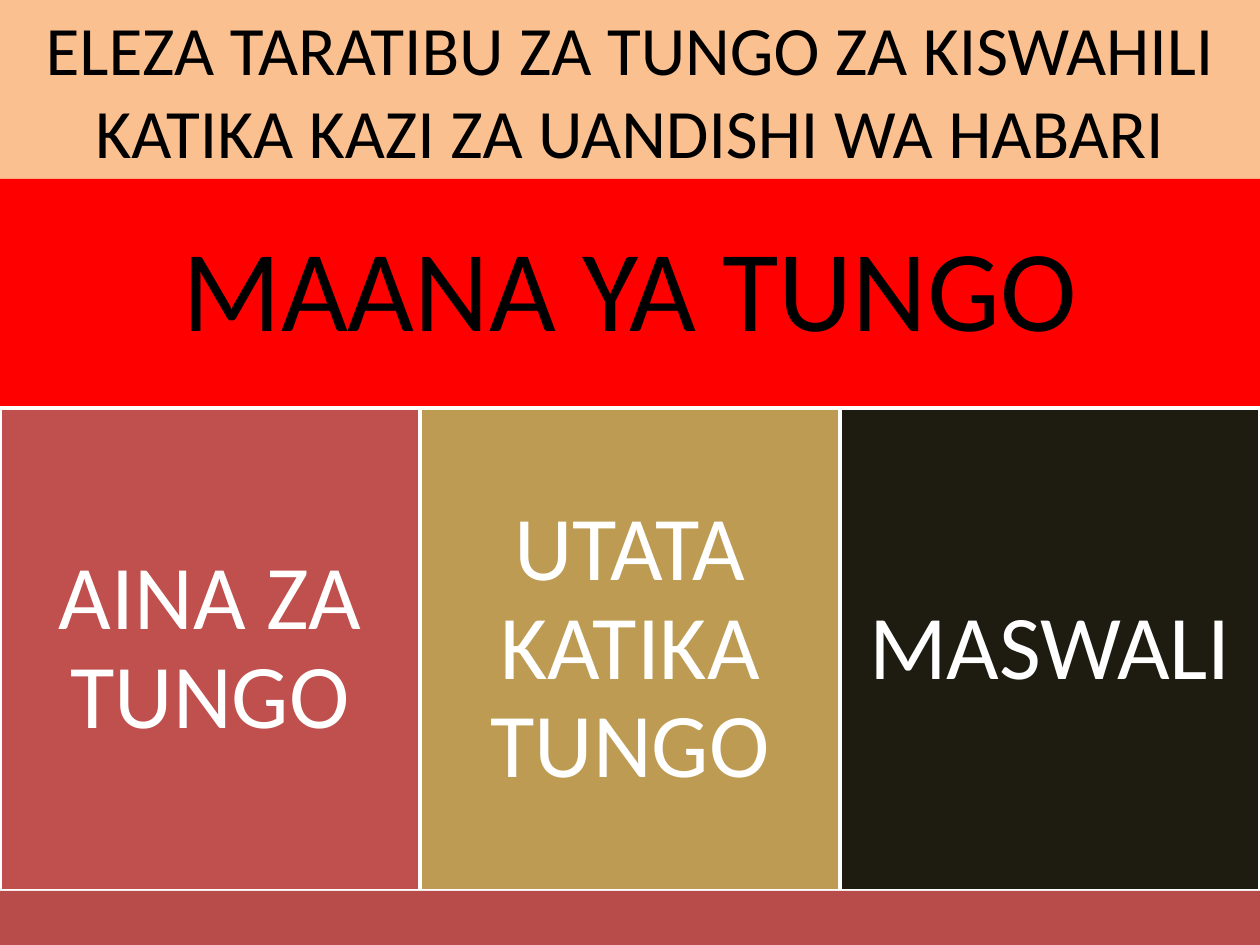
from pptx import Presentation
from pptx.dml.color import RGBColor
from pptx.enum.shapes import MSO_SHAPE
from pptx.enum.text import MSO_ANCHOR, PP_ALIGN
from pptx.util import Inches, Pt

RECTANGLE = MSO_SHAPE.RECTANGLE
MIDDLE = MSO_ANCHOR.MIDDLE
CENTER = PP_ALIGN.CENTER
WIDTH, HEIGHT = 10, 7.5


def color(value):
    return RGBColor.from_string(value)


def add_block(text, left, top, width, height, fill, line=None, size=52,
              font_color="FFFFFF", inset=0.22, spacing=0.9):
    shape = slide.shapes.add_shape(
        RECTANGLE, Inches(left), Inches(top), Inches(width), Inches(height))
    shape.shadow.inherit = False
    shape.fill.solid()
    shape.fill.fore_color.rgb = color(fill)
    if line:
        shape.line.color.rgb = color(line)
        shape.line.width = Pt(2)
    else:
        shape.line.fill.background()
    if not text:
        return
    frame = shape.text_frame
    frame.word_wrap = True
    frame.vertical_anchor = MIDDLE
    frame.margin_left = frame.margin_right = Inches(inset)
    frame.margin_top = frame.margin_bottom = Inches(min(inset, 0.28))
    paragraph = frame.paragraphs[0]
    paragraph.alignment = CENTER
    paragraph.line_spacing = spacing
    run = paragraph.add_run()
    run.text = text
    run.font.name = "Calibri"
    run.font.size = Pt(size)
    run.font.color.rgb = color(font_color)


presentation = Presentation()
presentation.slide_width = Inches(WIDTH)
presentation.slide_height = Inches(HEIGHT)
slide = presentation.slides.add_slide(presentation.slide_layouts[6])

# Row edges: title, banner, topics, footer
title_top, banner_top, topics_top, footer_top = 0, 1.42, 3.24, 7.07

# Title and banner
add_block("ELEZA TARATIBU ZA TUNGO ZA KISWAHILI KATIKA KAZI ZA UANDISHI WA HABARI",
          0, title_top, WIDTH, banner_top - title_top, "FAC090",
          size=39.6, font_color="000000", inset=0.1, spacing=1.0)
add_block("MAANA YA TUNGO", 0, banner_top, WIDTH, topics_top - banner_top,
          "FF0000", size=66, font_color="000000", inset=0.28)

# Three equal topic columns
topics = [("AINA ZA TUNGO", "C0504D"),
          ("UTATA KATIKA TUNGO", "BD9B53"),
          ("MASWALI", "1E1C11")]
column = WIDTH / len(topics)
for index, (topic, fill) in enumerate(topics):
    add_block(topic, index * column, topics_top, column,
              footer_top - topics_top, fill, line="FFFFFF")

# Footer strip
add_block("", 0, footer_top, WIDTH, HEIGHT - footer_top, "B74C4A")

presentation.save("out.pptx")
